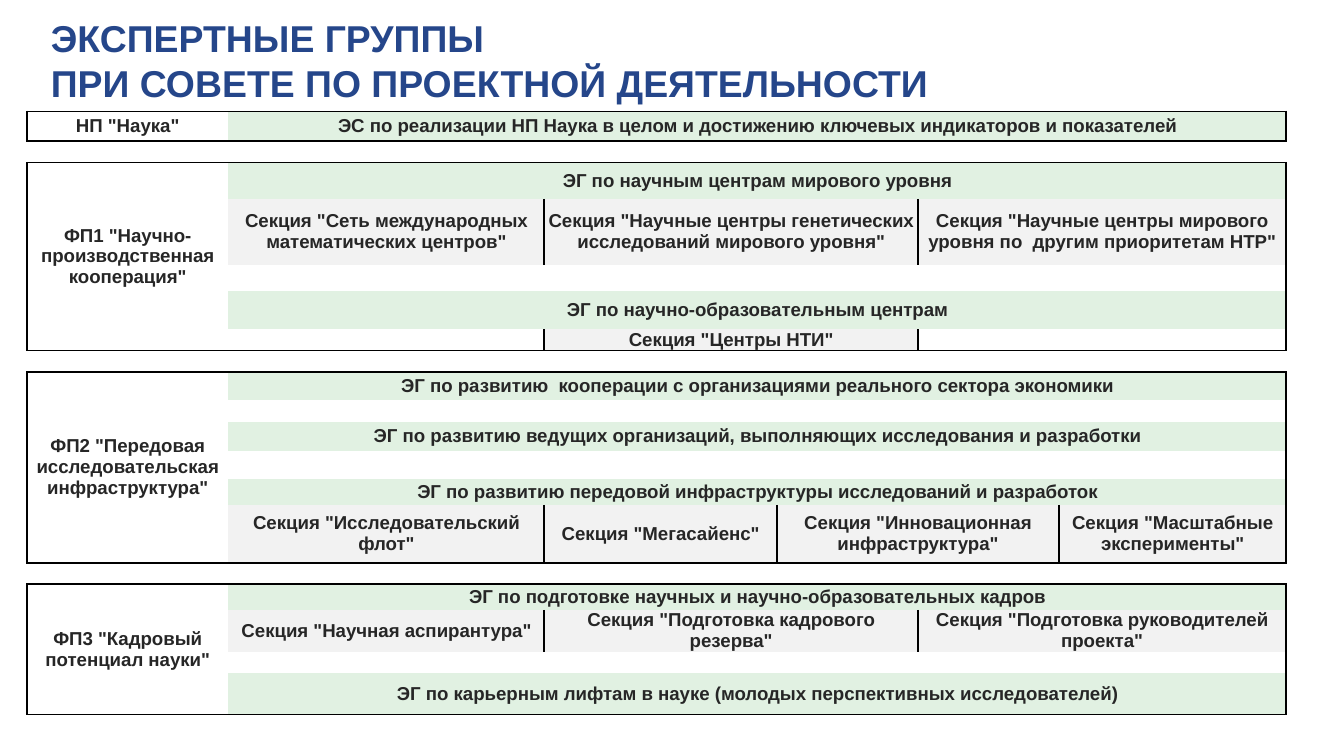
from typing import NamedTuple

from lxml.etree import SubElement as Sub
from pptx import Presentation
from pptx.dml.color import RGBColor as RGB
from pptx.enum.text import MSO_ANCHOR as Anchor, PP_ALIGN as Align
from pptx.oxml.ns import qn
from pptx.util import Inches, Pt

INK, NAVY, BLACK = "262626", "25468A", "000000"
WHITE, GREEN, GREY = "FFFFFF", "E1F1E2", "F2F2F2"
COLS = [0.68, 0.82, 0.55, 0.9, 0.9, 1.05, 0.68, 1.05, 1.05, 0.85, 0.84]
LEAD = 2  # columns taken by the label of a block
BODY = len(COLS) - LEAD
SPACER = 0.16
CELL = dict(margin_left=0, margin_right=0, margin_top=0, margin_bottom=0,
            vertical_anchor=Anchor.MIDDLE)


class Item(NamedTuple):
    text: str = ""
    span: int = 1
    fill: str = WHITE


class Band(NamedTuple):
    high: float
    items: list[Item]


class Block(NamedTuple):
    label: str
    bands: list[Band]


def group(high: float, text: str) -> Band:
    return Band(high, [Item(text, BODY, GREEN)])


def parts(high: float, *names: str, spans: tuple = (3, 3, 3)) -> Band:
    return Band(high, [Item(f'Секция "{name}"', span, GREY)
                       for name, span in zip(names, spans)])


def gap(high: float) -> Band:
    return Band(high, [Item()] * BODY)


BLOCKS = [
    Block('НП "Наука"', [
        group(0.22, "ЭС по реализации НП Наука в целом и достижению ключевых "
                    "индикаторов и показателей")]),
    Block('ФП1 "Научно-производственная кооперация"', [
        group(0.27, "ЭГ по научным центрам мирового уровня"),
        parts(0.49, "Сеть международных математических центров",
              "Научные центры генетических исследований мирового уровня",
              "Научные центры мирового уровня по  другим приоритетам НТР"),
        gap(0.2),
        group(0.28, "ЭГ по научно-образовательным центрам"),
        Band(0.16, [Item()] * 3 + parts(0.16, "Центры НТИ").items + [Item()] * 3)]),
    Block('ФП2 "Передовая исследовательская инфраструктура"', [
        group(0.21, "ЭГ по развитию  кооперации с организациями реального "
                    "сектора экономики"),
        gap(0.16),
        group(0.22, "ЭГ по развитию ведущих организаций, выполняющих "
                    "исследования и разработки"),
        gap(0.21),
        group(0.19, "ЭГ по развитию передовой инфраструктуры исследований "
                    "и разработок"),
        parts(0.43, "Исследовательский флот", "Мегасайенс",
              "Инновационная инфраструктура", "Масштабные эксперименты",
              spans=(3, 2, 2, 2))]),
    Block('ФП3 "Кадровый потенциал науки"', [
        group(0.19, "ЭГ по подготовке научных и научно-образовательных кадров"),
        parts(0.31, "Научная аспирантура", "Подготовка кадрового резерва",
              "Подготовка руководителей проекта"),
        gap(0.16),
        group(0.31, "ЭГ по карьерным лифтам в науке (молодых перспективных "
                    "исследователей)")]),
]


def color(code: str) -> RGB:
    return RGB.from_string(code)


def write(para, text: str, size: float, ink: str) -> None:
    run = para.add_run()
    run.text = text
    for key, value in dict(name="Arial", size=Pt(size), bold=True).items():
        setattr(run.font, key, value)
    run.font.color.rgb = color(ink)


def edge(cell, sides: str) -> None:
    """Rule the given sides (of L, R, T, B) and clear the others."""
    props = cell._tc.get_or_add_tcPr()
    for side in "LRTB":
        line = Sub(props, qn(f"a:ln{side}"), w=str(Pt(1)))
        if side in sides:
            Sub(Sub(line, qn("a:solidFill")), qn("a:srgbClr"), val=BLACK)
        else:
            Sub(line, qn("a:noFill"))


def put(table, row: int, col: int, item: Item, sides: str, deep: int = 1) -> None:
    """Fill one cell, merged over the item's span and the given rows."""
    for down in range(deep):
        for step in range(item.span):
            cell = table.cell(row + down, col + step)
            edge(cell, sides)
            for key, value in CELL.items():
                setattr(cell, key, value)
            cell.fill.solid()
            cell.fill.fore_color.rgb = color(item.fill)
            if not item.text or down or step:
                Sub(cell.text_frame.paragraphs[0]._p, qn("a:endParaRPr"), sz="800")
    cell = table.cell(row, col)
    if deep * item.span > 1:
        cell.merge(table.cell(row + deep - 1, col + item.span - 1))
    if item.text:
        para = cell.text_frame.paragraphs[0]
        para.alignment = Align.CENTER
        write(para, item.text, 10, INK)


def draw_band(table, row: int, items: list[Item], ends: str) -> None:
    """Draw a row of items, with a rule on both sides of each section."""
    col = LEAD
    for i, item in enumerate(items):
        sides = ends
        if i and GREY in (item.fill, items[i - 1].fill):
            sides += "L"
        last = i == len(items) - 1
        if last or GREY in (item.fill, items[i + 1].fill):
            sides += "R"
        put(table, row, col, item, sides)
        col += item.span


def draw_table(slide) -> None:
    highs = []
    for block in BLOCKS:
        highs += [band.high for band in block.bands] + [SPACER]
    highs.pop()
    table = slide.shapes.add_table(
        len(highs), len(COLS), Inches(0.2), Inches(0.83),
        Inches(sum(COLS)), Inches(sum(highs))).table
    table.first_row = table.horz_banding = False
    for col, wide in zip(table.columns, COLS):
        col.width = Inches(wide)
    for line, high in zip(table.rows, highs):
        line.height = Inches(high)

    row = 0
    for block in BLOCKS:
        if row:
            for col in range(len(COLS)):
                put(table, row, col, Item(), "TB")
            row += 1
        deep = len(block.bands)
        put(table, row, 0, Item(block.label, LEAD), "LTB", deep)
        for i, band in enumerate(block.bands):
            ends = "T" * (i == 0) + "B" * (i == deep - 1)
            draw_band(table, row + i, band.items, ends)
        row += deep


def draw_title(slide, *lines: str) -> None:
    frame = slide.shapes.add_textbox(
        Inches(0.28), Inches(0.13), Inches(9.29), Inches(0.63)).text_frame
    frame.word_wrap = True
    frame.vertical_anchor = Anchor.MIDDLE
    for i, text in enumerate(lines):
        write(frame.add_paragraph() if i else frame.paragraphs[0], text, 20, NAVY)


def main() -> None:
    deck = Presentation()
    deck.slide_width = Inches(10)
    deck.slide_height = deck.slide_width * 9 // 16
    slide = deck.slides.add_slide(deck.slide_layouts[6])
    draw_table(slide)
    draw_title(slide, "ЭКСПЕРТНЫЕ ГРУППЫ", "ПРИ СОВЕТЕ ПО ПРОЕКТНОЙ ДЕЯТЕЛЬНОСТИ")
    deck.save("out.pptx")


if __name__ == "__main__":
    main()
